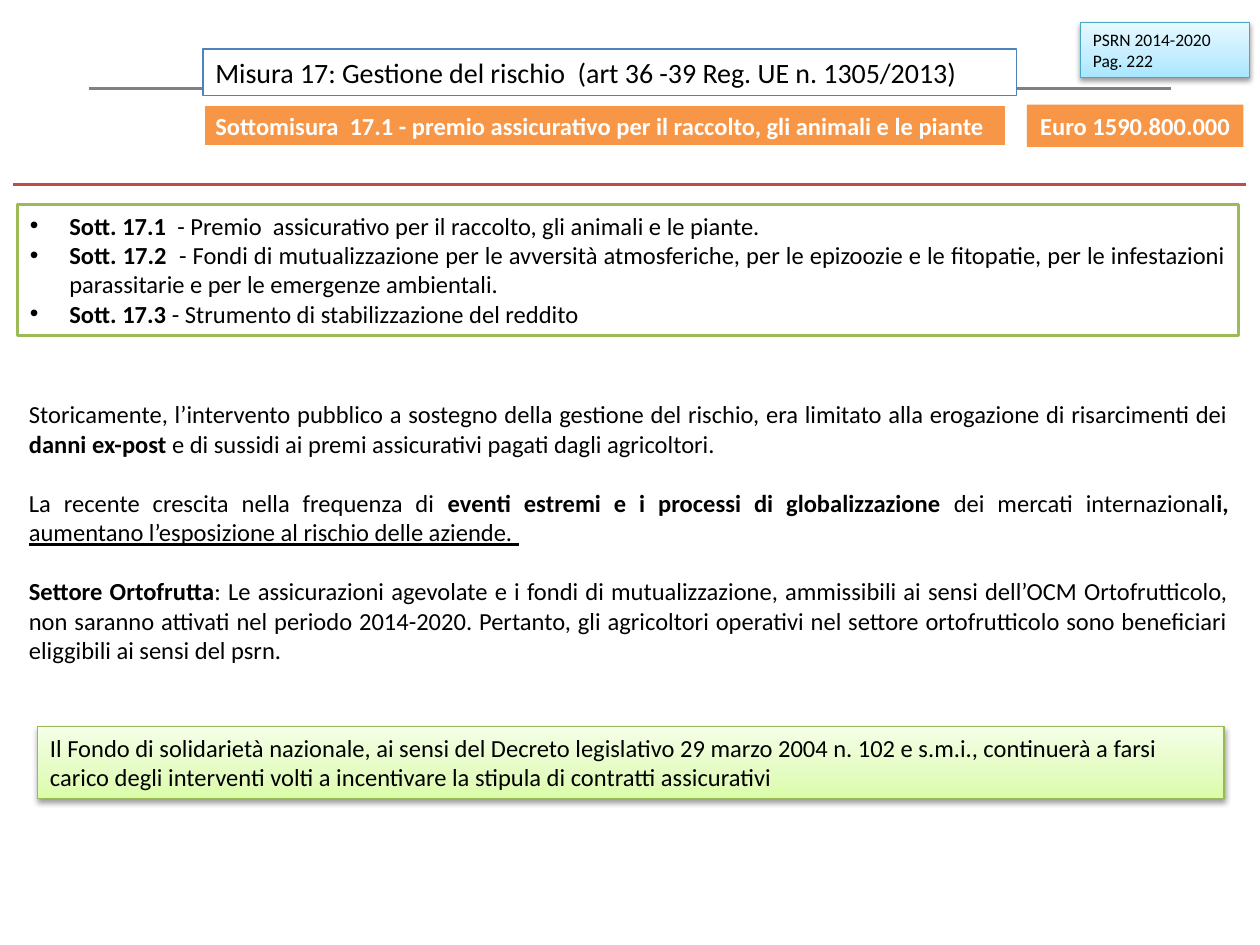
from copy import deepcopy
from pptx import Presentation
from pptx.dml.color import RGBColor
from pptx.enum.shapes import MSO_CONNECTOR as Link, MSO_SHAPE as Form
from pptx.enum.text import MSO_ANCHOR as Anchor, MSO_AUTO_SIZE as Auto, PP_ALIGN as Align
from pptx.oxml.ns import qn
from pptx.oxml.xmlchemy import OxmlElement as Node
from pptx.util import Pt


def tint(code):
    return RGBColor.from_string(code)


def add(parent, tag, **attrs):
    node = Node(tag)
    for name, value in attrs.items():
        node.set(name, str(value))
    parent.append(node)
    return node


def write(frame, text, size=14, color="000000", bold=False, align=Align.LEFT,
          gap=0, bullet=False, wrap=True):
    """Fill a frame line by line; stars toggle bold and underscores underline."""
    frame.word_wrap = wrap
    frame.auto_size = Auto.SHAPE_TO_FIT_TEXT
    frame.vertical_anchor = Anchor.TOP
    for row, line in enumerate(text.split("\n")):
        para = frame.add_paragraph() if row else frame.paragraphs[0]
        para.alignment = align
        if row and gap:
            para.space_before = Pt(gap)
        if bullet:
            props = para._p.get_or_add_pPr()
            props.set("marL", str(Pt(22.5)))
            props.set("indent", str(-Pt(22.5)))
            add(props, "a:buFont", typeface="Arial")
            add(props, "a:buChar", char="•")
        for i, part in enumerate(line.split("*")):
            for j, piece in enumerate(part.split("_")):
                if piece:
                    run = para.add_run()
                    run.text = piece
                    font = run.font
                    font.name, font.size = "Calibri", Pt(size)
                    font.bold = bold or i % 2 == 1
                    font.underline = j % 2 == 1
                    font.color.rgb = tint(color)


class Deck:
    def __init__(self):
        self.file = Presentation()
        self.file.slide_width, self.file.slide_height = Pt(720), Pt(540)
        self.page = self.file.slides.add_slide(self.file.slide_layouts[6])
        self.shapes = self.page.shapes

    def rule(self, left, right, top, color, width):
        line = self.shapes.add_connector(Link.STRAIGHT, Pt(left), Pt(top), Pt(right), Pt(top))
        line.line.color.rgb = tint(color)
        line.line.width = Pt(width)
        add(line._element.spPr, "a:effectLst")

    def note(self, area, text, **style):
        box = self.shapes.add_textbox(*map(Pt, area))
        write(box.text_frame, text, **style)

    def box(self, area, text, fill="FFFFFF", edge=None, width=0.75, **style):
        box = self.shapes.add_shape(Form.RECTANGLE, *map(Pt, area))
        box.shadow.inherit = False
        box.fill.solid()
        box.fill.fore_color.rgb = tint(fill)
        if edge:
            box.line.color.rgb = tint(edge)
            box.line.width = Pt(width)
        else:
            box.line.fill.background()
        write(box.text_frame, text, **style)
        return box

    def glow(self, area, text, shades, edge, **style):
        box = self.box(area, text, edge=edge, **style)
        box.fill.gradient()
        box.fill.gradient_angle = 90
        props = box._element.spPr
        stops = props.find(qn("a:gradFill")).find(qn("a:gsLst"))
        stops.append(deepcopy(stops[0]))
        for stop, spot, shade in zip(box.fill.gradient_stops, (0, 0.35, 1), shades):
            stop.position = spot
            stop.color.rgb = tint(shade)
        cast = add(props.find(qn("a:effectLst")), "a:outerShdw", blurRad=Pt(3.1),
                   dist=Pt(1.6), dir=5400000, rotWithShape=0)
        add(add(cast, "a:srgbClr", val="000000"), "a:alpha", val=38000)


def main():
    deck = Deck()
    deck.rule(51, 669, 50.4, "808080", 1.75)
    deck.box((10, 116.8, 697.7, 75), (
        "*Sott. 17.1  *- Premio  assicurativo per il raccolto, gli animali e le piante.\n"
        "*Sott. 17.2  *- Fondi di mutualizzazione per le avversità atmosferiche, per le "
        "epizoozie e le fitopatie, per le infestazioni parassitarie e per le emergenze ambientali.\n"
        "*Sott. 17.3 *- Strumento di stabilizzazione del reddito"),
        edge="9BBB59", width=2, align=Align.JUSTIFY, bullet=True)
    deck.note((9.4, 224.6, 699.8, 160), (
        "Storicamente, l’intervento pubblico a sostegno della gestione del rischio, era limitato "
        "alla erogazione di risarcimenti dei *danni ex-post *e di sussidi ai premi assicurativi "
        "pagati dagli agricoltori.\n"
        "La recente crescita nella frequenza di *eventi estremi e i processi di globalizzazione *"
        "dei mercati internazional*i, *_aumentano l’esposizione al rischio delle aziende. _\n"
        "*Settore Ortofrutta*: Le assicurazioni agevolate e i fondi di mutualizzazione, ammissibili "
        "ai sensi dell’OCM Ortofrutticolo, non saranno attivati nel periodo 2014-2020. Pertanto, "
        "gli agricoltori operativi nel settore ortofrutticolo sono beneficiari eliggibili ai sensi "
        "del psrn."), align=Align.JUSTIFY, gap=17)
    badge = {"fill": "F79646", "color": "FFFFFF", "bold": True}
    deck.box((116, 59.8, 459.4, 24.2),
             "Sottomisura  17.1 - premio assicurativo per il raccolto, gli animali e le piante",
             edge="FFFFFF", width=2, **badge)
    deck.box((116, 28, 465, 26.7),
             "Misura 17: Gestione del rischio  (art 36 -39 Reg. UE n. 1305/2013)",
             edge="4F81BD", size=16)
    deck.box((586.8, 59.8, 123.8, 24.2), "Euro 1590.800.000",
             align=Align.CENTER, wrap=False, **badge)
    deck.glow((617.5, 13, 96.5, 31.5), "PSRN 2014-2020\nPag. 222",
              ("A7E6FF", "C1EDFF", "E7F8FF"), "46AAC5", size=10)
    deck.rule(7.5, 712, 105.6, "BF4C48", 1.5)
    deck.glow((21.5, 415.2, 678, 41.2), (
        "Il Fondo di solidarietà nazionale, ai sensi del Decreto legislativo 29 marzo 2004 n. 102 "
        "e s.m.i., continuerà a farsi carico degli interventi volti a incentivare la stipula di "
        "contratti assicurativi"), ("DAFDA7", "E4FCC2", "F5FFE7"), "98B955")
    deck.file.save("out.pptx")


if __name__ == "__main__":
    main()
